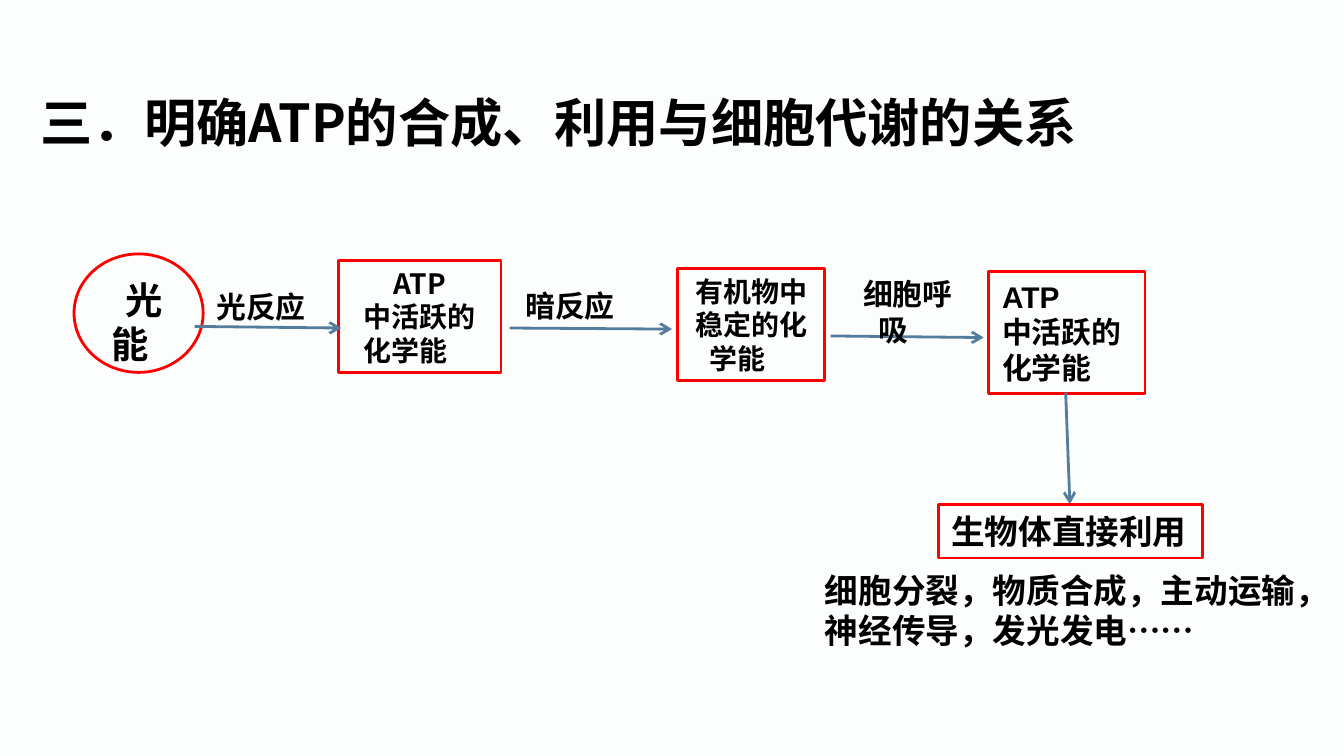
from pptx import Presentation
from pptx.dml.color import RGBColor
from pptx.enum.shapes import MSO_CONNECTOR, MSO_SHAPE
from pptx.enum.text import MSO_ANCHOR, MSO_AUTO_SIZE, PP_ALIGN
from pptx.oxml.ns import qn
from pptx.util import Cm, Pt
from lxml import etree

RECT, OVAL = MSO_SHAPE.RECTANGLE, MSO_SHAPE.OVAL
STRAIGHT = MSO_CONNECTOR.STRAIGHT
TOP, MIDDLE = MSO_ANCHOR.TOP, MSO_ANCHOR.MIDDLE
LEFT, CENTER = PP_ALIGN.LEFT, PP_ALIGN.CENTER
FIXED = MSO_AUTO_SIZE.NONE
TITLE_ONLY = 5

SANS, HAN = "Arial", "Noto Sans CJK SC"
BLACK, RED, BLUE, PAPER = "000000", "FF0000", "547D9D", "FCFDFD"
WIDE, TIGHT, NONE = (0.25, 0.13), (0.18, 0.1), (0, 0)


def color(code):
    return RGBColor.from_string(code)


def write(shape, lines, size, font=SANS, align=LEFT, anchor=TOP,
          inset=WIDE, wrap=True):
    """Each line is a list of (text, size or None, bold) or a plain string."""
    frame = shape.text_frame
    frame.auto_size = FIXED
    frame.word_wrap = wrap
    frame.vertical_anchor = anchor
    frame.margin_left = frame.margin_right = Cm(inset[0])
    frame.margin_top = frame.margin_bottom = Cm(inset[1])
    for i, line in enumerate(lines):
        para = frame.paragraphs[0] if i == 0 else frame.add_paragraph()
        para.alignment = align
        parts = [(line, size, True)] if isinstance(line, str) else line
        for text, points, bold in parts:
            run = para.add_run()
            run.text = text
            run.font.size = Pt(points)
            run.font.bold = bold
            run.font.color.rgb = color(BLACK)
            run.font.name = font
            east = etree.SubElement(run.font._element, qn("a:ea"))
            east.set("typeface", HAN)


def frame(slide, kind, box):
    """Red outline without a fill."""
    shape = slide.shapes.add_shape(kind, *map(Cm, box))
    shape.shadow.inherit = False
    shape.fill.background()
    shape.line.color.rgb = color(RED)
    shape.line.width = Pt(1.5)
    return shape


def label(slide, box, lines, size, **style):
    write(slide.shapes.add_textbox(*map(Cm, box)), lines, size, **style)


def arrow(slide, ends):
    line = slide.shapes.add_connector(STRAIGHT, *map(Cm, ends))
    line.line.color.rgb = color(BLUE)
    line.line.width = Pt(1.5)
    etree.SubElement(line.line._get_or_add_ln(), qn("a:tailEnd")).set("type", "arrow")
    etree.SubElement(line._element.spPr, qn("a:effectLst"))


def heading(slide, box):
    title = slide.shapes.title
    title.left, title.top, title.width, title.height = map(Cm, box)
    write(title, ["三．明确ATP的合成、利用与细胞代谢的关系"], 28,
          font=HAN, anchor=MIDDLE, inset=NONE)


def light(slide, box):
    """Light energy, the start of the chain."""
    x, y, w, h = box
    label(slide, (x + 0.33, y + 0.76, 1.98, 1.04),
          [[("光能", 20, True), ("\u3000".replace("\u3000", "　"), 15, False)]],
          20, align=CENTER, anchor=MIDDLE, inset=TIGHT)
    frame(slide, OVAL, box)


def stores(slide):
    """Boxes for the forms of chemical energy."""
    mid = dict(align=CENTER, anchor=MIDDLE, inset=TIGHT)
    for box, lines, size, style in (
        ((6.4, 4.93, 3.07, 2.11), ["ATP", "中活跃的", "化学能　"], 15,
         dict(mid, font=HAN)),
        ((12.8, 5.08, 2.79, 2.11), ["有机物中稳定的化学能　"], 15, mid),
        ((18.69, 5.13, 2.95, 2.31), ["ATP", "中活跃的", "化学能"], 16, {}),
    ):
        write(frame(slide, RECT, box), lines, size, **style)


def steps(slide):
    """Arrows of the chain with the names of the processes."""
    for ends in ((3.68, 6.17, 6.45, 6.2), (9.63, 6.2, 12.7, 6.22),
                 (15.7, 6.35, 18.59, 6.38), (20.14, 7.42, 20.22, 9.53)):
        arrow(slide, ends)
    label(slide, (3.84, 5.33, 2.72, 0.94), ["光反应"], 16)
    label(slide, (9.68, 5.31, 2.24, 0.94), ["暗反应"], 16, wrap=False)
    label(slide, (15.82, 5.44, 2.67, 0.89),
          [[("细胞呼吸", 16, True), ("　", 15, True)]], 16,
          align=CENTER, anchor=MIDDLE, inset=TIGHT)


def usage(slide, box):
    """Direct use by the organism, with examples below."""
    x, y, w, h = box
    write(frame(slide, RECT, box), ["生物体直接利用"], 18, wrap=False)
    label(slide, (x - 2.39, y + h + 0.09, 10.06, 1.8),
          ["细胞分裂，物质合成，主动运输，神经传导，发光发电……"], 18, font=HAN)


def main():
    deck = Presentation()
    deck.slide_width, deck.slide_height = Cm(25.4), Cm(14.29)
    slide = deck.slides.add_slide(deck.slide_layouts[TITLE_ONLY])
    slide.background.fill.solid()
    slide.background.fill.fore_color.rgb = color(PAPER)
    heading(slide, (0.76, 1.7, 20.09, 1.19))
    light(slide, (1.4, 4.8, 2.44, 2.24))
    stores(slide)
    steps(slide)
    usage(slide, (17.73, 9.53, 5, 1.02))
    deck.save("out.pptx")


if __name__ == "__main__":
    main()
